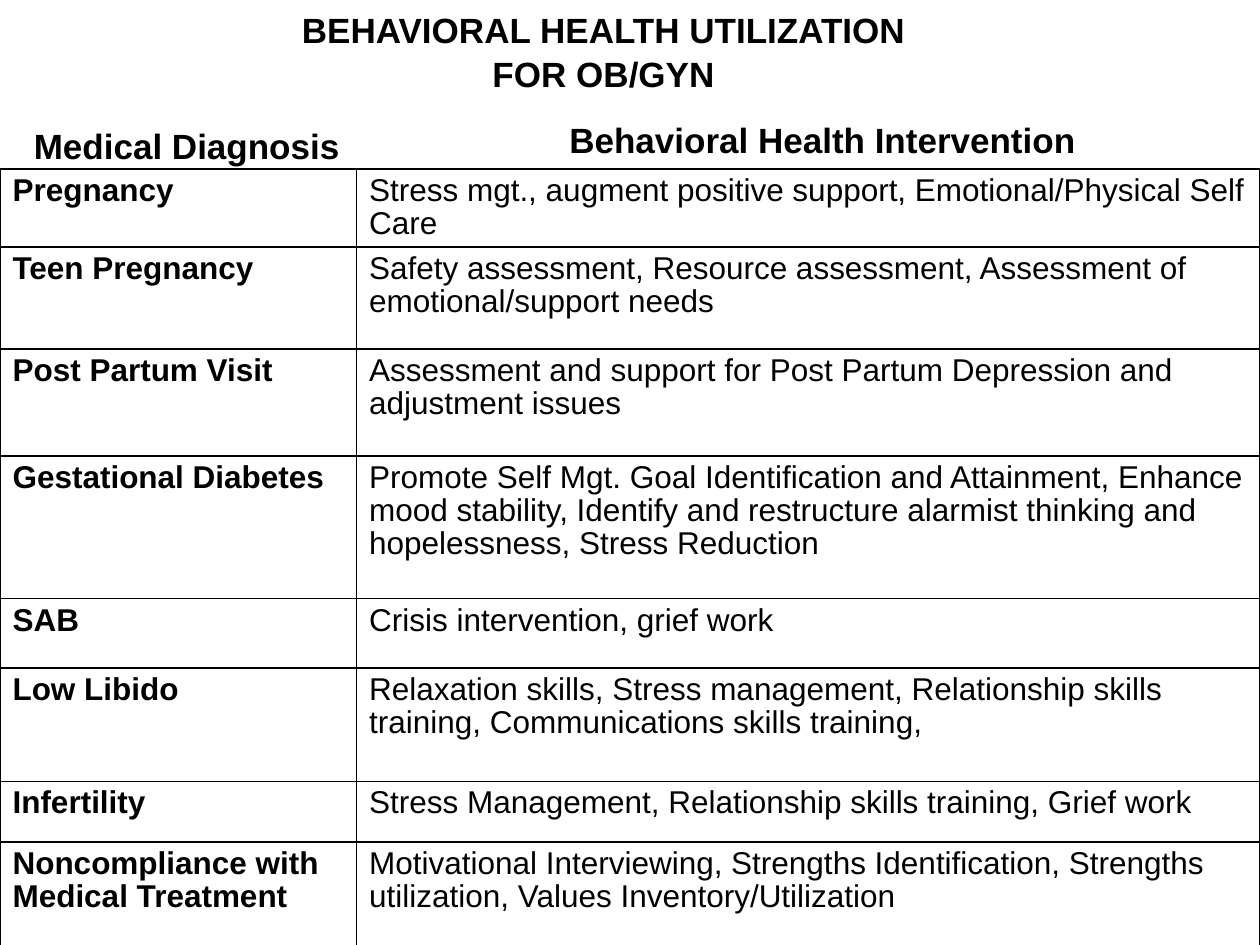
from dataclasses import dataclass
from typing import Any

from lxml import etree
from pptx import Presentation
from pptx import util as u
from pptx.dml import color
from pptx.enum import text
from pptx.oxml import ns

WIDTH, HEIGHT = 10, 7.5
COLORS = {"ink": "000000", "paper": "FFFFFF"}
HEADING = {"name": "Arial", "size": u.Pt(20), "bold": True}
DIAGNOSIS = {"name": "Arial", "size": u.Pt(18), "bold": True}
INTERVENTION = {**DIAGNOSIS, "bold": False}
COLUMN_SHARES = (0.283, 0.717)
TABLE_TOP = 1.34


@dataclass(frozen=True)
class Heading:
    lines: tuple[str, ...]
    left: float
    top: float
    width: float
    height: float
    align: Any = text.PP_ALIGN.LEFT


@dataclass(frozen=True)
class Care:
    diagnosis: str
    intervention: str
    height: float


HEADINGS = (
    Heading(("BEHAVIORAL HEALTH UTILIZATION", "FOR OB/GYN"),
            0.05, 0, 0.858, 0.067, text.PP_ALIGN.CENTER),
    Heading(("Medical Diagnosis",), 0.017, 0.123, 0.267, 0.058),
    Heading(("Behavioral Health Intervention",), 0.442, 0.117, 0.483, 0.058),
)

CARES = (
    Care("Pregnancy",
         "Stress mgt., augment positive support, Emotional/Physical Self Care", 0.62),
    Care("Teen Pregnancy",
         "Safety assessment, Resource assessment, Assessment of "
         "emotional/support needs", 0.81),
    Care("Post Partum Visit",
         "Assessment and support for Post Partum Depression and "
         "adjustment issues", 0.85),
    Care("Gestational Diabetes",
         "Promote Self Mgt. Goal Identification and Attainment, Enhance mood "
         "stability, Identify and restructure alarmist thinking and "
         "hopelessness, Stress Reduction", 1.13),
    Care("SAB", "Crisis intervention, grief work", 0.55),
    Care("Low Libido",
         "Relaxation skills, Stress management, Relationship skills training, "
         "Communications skills training,", 0.9),
    Care("Infertility",
         "Stress Management, Relationship skills training, Grief work", 0.48),
    Care("Noncompliance with Medical Treatment",
         "Motivational Interviewing, Strengths Identification, Strengths "
         "utilization, Values Inventory/Utilization", 0.9),
)


def write(para: Any, words: str, formats: dict[str, Any], spacing: float) -> None:
    para.line_spacing = spacing
    span = para.add_run()
    span.text = words
    for name, value in formats.items():
        setattr(span.font, name, value)
    span.font.color.rgb = color.RGBColor.from_string(COLORS["ink"])


def draw_heading(page: Any, heading: Heading) -> None:
    box = page.shapes.add_textbox(
        u.Inches(heading.left * WIDTH), u.Inches(heading.top * HEIGHT),
        u.Inches(heading.width * WIDTH), u.Inches(heading.height * HEIGHT))
    frame = box.text_frame
    frame.word_wrap = True
    for index, line in enumerate(heading.lines):
        para = frame.add_paragraph() if index else frame.paragraphs[0]
        para.alignment = heading.align
        write(para, line, HEADING, 1.05)


def draw_borders(cell: Any) -> None:
    properties = cell._tc.get_or_add_tcPr()
    for position, side in enumerate(("lnL", "lnR", "lnT", "lnB")):
        line = etree.Element(ns.qn(f"a:{side}"), w=str(u.Pt(1)))
        fill = etree.SubElement(line, ns.qn("a:solidFill"))
        etree.SubElement(fill, ns.qn("a:srgbClr"), val=COLORS["ink"])
        properties.insert(position, line)


def draw_cell(cell: Any, words: str, formats: dict[str, Any]) -> None:
    cell.fill.solid()
    cell.fill.fore_color.rgb = color.RGBColor.from_string(COLORS["paper"])
    write(cell.text_frame.paragraphs[0], words, formats, 0.93)
    draw_borders(cell)


def draw_table(page: Any, cares: tuple[Care, ...]) -> None:
    table = page.shapes.add_table(
        len(cares), len(COLUMN_SHARES), 0, u.Inches(TABLE_TOP), u.Inches(WIDTH),
        u.Inches(sum(care.height for care in cares))).table
    table.first_row = table.horz_banding = False
    for column, share in zip(table.columns, COLUMN_SHARES):
        column.width = u.Inches(share * WIDTH)
    for row, care in zip(table.rows, cares):
        row.height = u.Inches(care.height)
        draw_cell(row.cells[0], care.diagnosis, DIAGNOSIS)
        draw_cell(row.cells[1], care.intervention, INTERVENTION)


def main() -> None:
    deck = Presentation()
    deck.slide_width, deck.slide_height = u.Inches(WIDTH), u.Inches(HEIGHT)
    page = deck.slides.add_slide(deck.slide_layouts[6])
    draw_table(page, CARES)
    for heading in HEADINGS:
        draw_heading(page, heading)
    deck.save("out.pptx")


if __name__ == "__main__":
    main()
